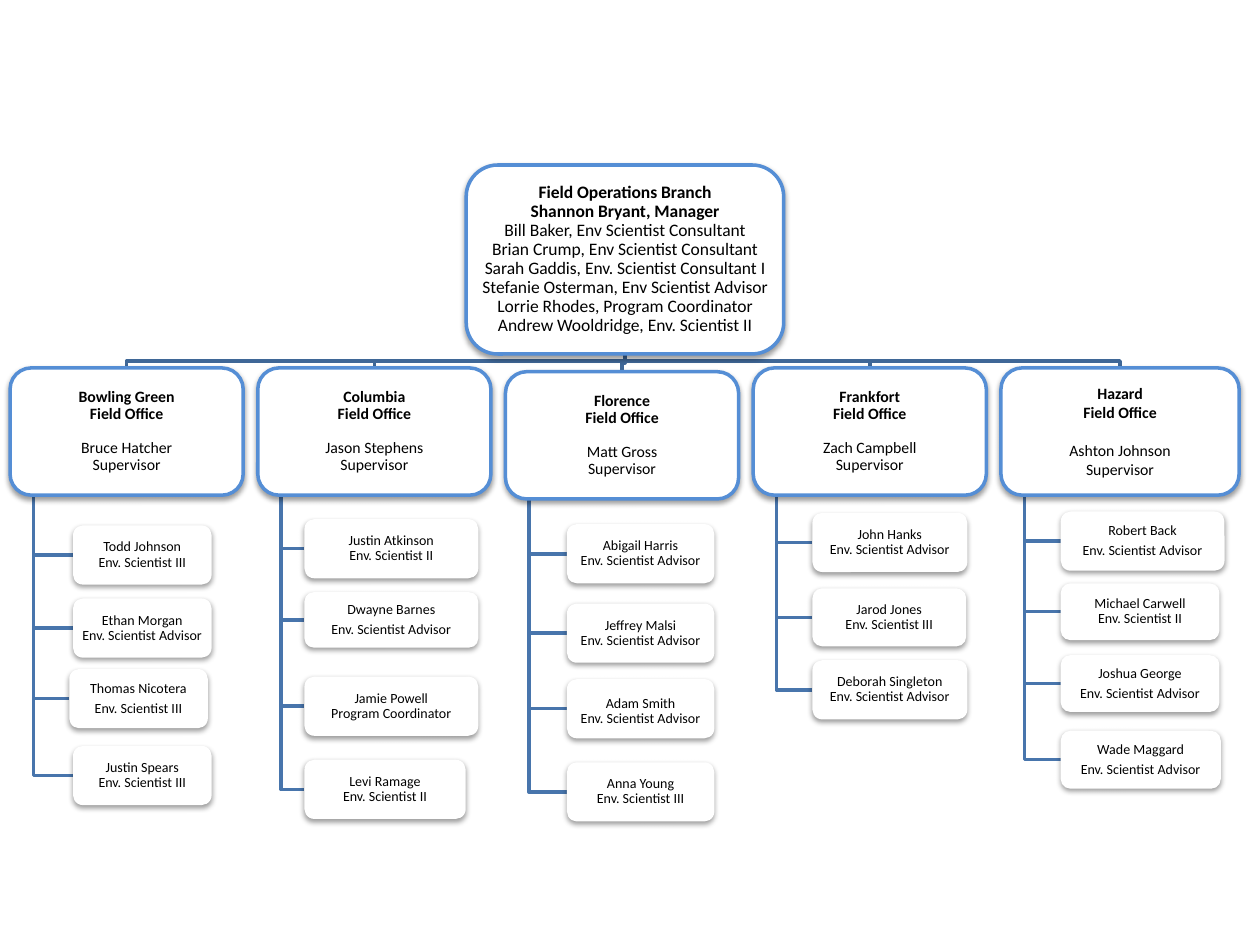
import pptx
import pptx.util
import pptx.dml.color
import pptx.enum.shapes
import pptx.enum.text
import pptx.oxml.ns
from dataclasses import dataclass
from lxml import etree

SLIDE_WIDTH = pptx.util.Inches(10)
SLIDE_HEIGHT = pptx.util.Inches(7.5)

# All lengths below are hundredths of the slide width
COLUMN_START, COLUMN_PITCH = 0.8, 19.66
OFFICE_WIDTH, OFFICE_HEIGHT, OFFICE_TOP = 18.5, 10.1, 29.2
TRUNK_INDENT = 1.85
BOX_LINE, BRANCH_LINE, STAFF_LINE = "558ED5", "3F6797", "4875AC"


@dataclass
class Box:
    left: float
    top: float
    width: float
    height: float

    @property
    def middle(self):
        return self.left + self.width / 2

    @property
    def center(self):
        return self.top + self.height / 2

    @property
    def bottom(self):
        return self.top + self.height


@dataclass
class Staff:
    name: str
    role: str
    top: float
    width: float
    height: float = 4.7
    gap: float = 0
    nudge: float = 0
    inset_top: float = 0.1


@dataclass
class Office:
    city: str
    supervisor: str
    indent: float
    staff: list
    lower: float = 0
    wider: float = 0
    spacing: float = 0.9
    gap: float = 9.9


MANAGERS = ["Field Operations Branch", "Shannon Bryant, Manager"]
BRANCH_STAFF = [
    "Bill Baker, Env Scientist Consultant",
    "Brian Crump, Env Scientist Consultant",
    "Sarah Gaddis, Env. Scientist Consultant I\vStefanie Osterman, Env Scientist Advisor",
    "Lorrie Rhodes, Program Coordinator",
    "Andrew Wooldridge, Env. Scientist II",
]
ADVISOR = "Env. Scientist Advisor"
SCIENTIST_2, SCIENTIST_3 = "Env. Scientist II", "Env. Scientist III"

OFFICES = [
    Office("Bowling Green", "Bruce Hatcher", 5, [
        Staff("Todd Johnson", SCIENTIST_3, 41.7, 11),
        Staff("Ethan Morgan", ADVISOR, 47.5, 11),
        Staff("Thomas Nicotera", SCIENTIST_3, 53.1, 11, gap=2.8, nudge=-0.3),
        Staff("Justin Spears", SCIENTIST_3, 59.2, 11),
    ]),
    Office("Columbia", "Jason Stephens", 3.7, [
        Staff("Justin Atkinson", SCIENTIST_2, 41.2, 13.8),
        Staff("Dwayne Barnes", ADVISOR, 47, 13.8, 4.4, gap=2.8),
        Staff("Jamie Powell", "Program Coordinator", 53.7, 13.8),
        Staff("Levi Ramage", SCIENTIST_2, 60.3, 12.8),
    ]),
    Office("Florence", "Matt Gross", 4.88, [
        Staff("Abigail Harris", ADVISOR, 41.6, 11.7),
        Staff("Jeffrey Malsi", ADVISOR, 47.9, 11.7),
        Staff("Adam Smith", ADVISOR, 53.9, 11.7, inset_top=0.6),
        Staff("Anna Young", SCIENTIST_3, 60.5, 11.7),
    ], lower=0.3),
    Office("Frankfort", "Zach Campbell", 4.7, [
        Staff("John Hanks", ADVISOR, 40.7, 12.3),
        Staff("Jarod Jones", SCIENTIST_3, 46.7, 12.2, 4.6),
        Staff("Deborah Singleton", ADVISOR, 52.4, 12.3),
    ]),
    Office("Hazard", "Ashton Johnson", 4.75, [
        Staff("Robert Back", ADVISOR, 40.6, 13, gap=2.8),
        Staff("Michael Carwell", SCIENTIST_2, 46.3, 12.6, 4.5),
        Staff("Joshua George", ADVISOR, 52, 12.6, 4.5, gap=2.8),
        Staff("Wade Maggard", ADVISOR, 58, 12.7, 4.6, gap=2.8),
    ], wider=0.4, spacing=1.0, gap=11),
]


def share(value):
    return round(SLIDE_WIDTH * value / 100)


def color(hex_value):
    return pptx.dml.color.RGBColor.from_string(hex_value)


def apply(target, formats):
    for name, value in formats.items():
        setattr(target, name, value)


def add_shadow(shape):
    effects = shape._element.spPr.find(pptx.oxml.ns.qn("a:effectLst"))
    shadow = etree.SubElement(effects, pptx.oxml.ns.qn("a:outerShdw"),
                              blurRad="40000", dist="20000", dir="5400000", rotWithShape="0")
    black = etree.SubElement(shadow, pptx.oxml.ns.qn("a:srgbClr"), val="000000")
    etree.SubElement(black, pptx.oxml.ns.qn("a:alpha"), val="38000")


def add_path(slide, points, line_color):
    """Draw an open right-angled line through the points."""
    start, *rest = [(share(x), share(y)) for x, y in points]
    builder = slide.shapes.build_freeform(*start)
    builder.add_line_segments(rest, close=False)
    shape = builder.convert_to_shape()
    shape.shadow.inherit = False
    shape.fill.background()
    shape.line.color.rgb = color(line_color)
    shape.line.width = pptx.util.Pt(2)


def add_box(slide, box, lines, size, spacing=0.9, outlined=True, inset_top=0.1):
    """Draw a rounded box; each line is (text, bold, points before)."""
    shape = slide.shapes.add_shape(
        pptx.enum.shapes.MSO_SHAPE.ROUNDED_RECTANGLE,
        share(box.left), share(box.top), share(box.width), share(box.height))
    shape.shadow.inherit = False
    shape.fill.solid()
    shape.fill.fore_color.rgb = color("FFFFFF")
    if outlined:
        shape.line.color.rgb = color(BOX_LINE)
        shape.line.width = pptx.util.Pt(2)
    else:
        shape.line.fill.background()
    add_shadow(shape)

    frame = shape.text_frame
    inset = share(0.1)
    apply(frame, {"margin_left": inset, "margin_right": inset, "margin_bottom": inset,
                  "margin_top": share(inset_top), "word_wrap": True,
                  "vertical_anchor": pptx.enum.text.MSO_ANCHOR.MIDDLE})
    for index, (text, bold, before) in enumerate(lines):
        paragraph = frame.add_paragraph() if index else frame.paragraphs[0]
        apply(paragraph, {"text": text, "alignment": pptx.enum.text.PP_ALIGN.CENTER,
                          "line_spacing": spacing, "space_before": pptx.util.Pt(before)})
        for run in paragraph.runs:
            apply(run.font, {"name": "Calibri", "size": pptx.util.Pt(size), "bold": bold})
            run.font.color.rgb = color("000000")


def main():
    presentation = pptx.Presentation()
    presentation.slide_width, presentation.slide_height = SLIDE_WIDTH, SLIDE_HEIGHT
    slide = presentation.slides.add_slide(presentation.slide_layouts[6])

    # Place every box
    branch = Box(37, 13.1, 25.2, 15)
    office_boxes = [
        Box(COLUMN_START + column * COLUMN_PITCH, OFFICE_TOP + office.lower,
            OFFICE_WIDTH + office.wider, OFFICE_HEIGHT)
        for column, office in enumerate(OFFICES)]
    staff_boxes = [
        [Box(box.left + office.indent + person.nudge, person.top, person.width, person.height)
         for person in office.staff]
        for office, box in zip(OFFICES, office_boxes)]

    # Lines lie behind the boxes
    for box, members in zip(office_boxes, staff_boxes):
        trunk = box.left + TRUNK_INDENT
        for member in members:
            add_path(slide, [(trunk, box.bottom), (trunk, member.center),
                             (member.left, member.center)], STAFF_LINE)
        bus = (branch.bottom + box.top) / 2
        add_path(slide, [(branch.middle, branch.bottom), (branch.middle, bus),
                         (box.middle, bus), (box.middle, box.top)], BRANCH_LINE)

    # Branch, offices and their staff
    add_box(slide, branch, [(text, True, 0) for text in MANAGERS]
            + [(text, False, 0) for text in BRANCH_STAFF], 10)
    for office, box, members in zip(OFFICES, office_boxes, staff_boxes):
        add_box(slide, box, [(office.city, True, 0), ("Field Office", True, 0),
                             (office.supervisor, False, office.gap),
                             ("Supervisor", False, 0)], 9, office.spacing)
        for person, member in zip(office.staff, members):
            add_box(slide, member, [(person.name, False, 0), (person.role, False, person.gap)],
                    8, outlined=False, inset_top=person.inset_top)

    presentation.save("out.pptx")


if __name__ == "__main__":
    main()
